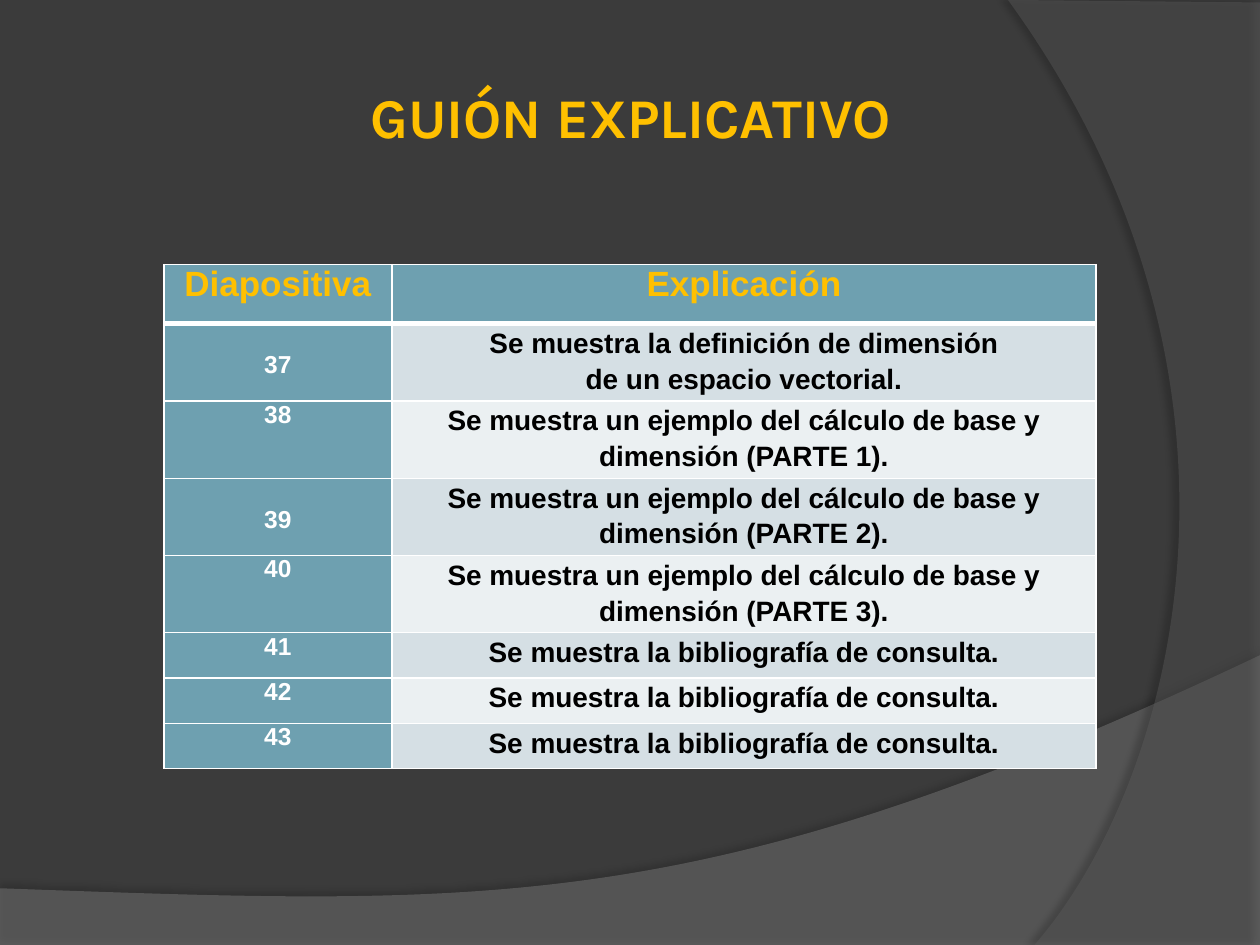
from lxml import etree
from pptx import Presentation
from pptx.dml.color import RGBColor
from pptx.enum.text import MSO_ANCHOR, PP_ALIGN
from pptx.oxml import parse_xml
from pptx.oxml.ns import nsdecls, qn
from pptx.util import Inches, Pt

CENTER, MIDDLE = PP_ALIGN.CENTER, MSO_ANCHOR.MIDDLE
WIDE, HIGH = 10, 7.5
INK = {"back": "3B3B3B", "low": "7F7F7F", "side": "5E5E5E", "gold": "FFC000",
       "teal": "6EA0B0", "odd": "D5DFE4", "even": "EBF0F2",
       "white": "FFFFFF", "black": "000000"}

TITLE = "GUIÓN EXPLICATIVO"
HEAD = ("Diapositiva", "Explicación")
PART = "Se muestra un ejemplo del cálculo de base y dimensión (PARTE {})."
BOOKS = "Se muestra la bibliografía de consulta."
NOTES = ["Se muestra la definición de dimensión\nde un espacio vectorial.",
         *(PART.format(n) for n in (1, 2, 3)), BOOKS, BOOKS, BOOKS]
FIRST = 37
LOWERED = (37, 39)      # numbers set one line lower in their cell
COLS = (1.81, 5.59)
HEAD_H, ROW_H = 0.47, 0.36
LINE_H = 0.22

# Each wave: corner points, the last of which starts the Bezier curve
WAVES = [
    dict(color="low", alpha=45, dark=35, dist=3.5, turn=270,
         corners=[(0, 7.05), (0, 7.51), (10, 7.51), (10, 5.2)],
         curve=[(5.59, 7.29), (3.91, 7.19), (0, 7.05)]),
    dict(color="side", alpha=40, dark=45, dist=4, turn=180,
         corners=[(10, 0.02), (10, 7.5), (8.21, 7.5)],
         curve=[(9.35, 6.19), (10.18, 3), (8, 0)]),
]


def rgb(name):
    return RGBColor.from_string(INK[name])


def paint(fill, name):
    fill.solid()
    fill.fore_color.rgb = rgb(name)


def bend(shape, first):
    """Turn three line segments, from index first on, into one curve."""
    track = shape._element.spPr.find(".//" + qn("a:path"))
    lines = track.findall(qn("a:lnTo"))[first:first + 3]
    curve = etree.Element(qn("a:cubicBezTo"))
    lines[0].addprevious(curve)
    for line in lines:
        curve.append(line[0])
        track.remove(line)
    # Control points may reach past the slide; the outline does not
    shape.width = min(shape.width, Inches(WIDE) - shape.left)
    track.set("w", str(shape.width))


def wave(slide, color, alpha, dark, dist, turn, corners, curve):
    pts = [(Inches(x), Inches(y)) for x, y in corners + curve]
    pen = slide.shapes.build_freeform(*pts[0])
    pen.add_line_segments(pts[1:], close=True)
    shape = pen.convert_to_shape()
    bend(shape, len(corners) - 1)
    paint(shape.fill, color)
    tint = shape.fill._xPr.find(qn("a:solidFill"))[0]
    etree.SubElement(tint, qn("a:alpha"), val=str(alpha * 1000))
    shape.line.fill.background()
    shape._element.spPr.append(parse_xml(
        f'<a:effectLst {nsdecls("a")}><a:outerShdw blurRad="{Pt(4)}" '
        f'dist="{Pt(dist)}" dir="{turn * 60000}" rotWithShape="0">'
        f'<a:srgbClr val="{INK["black"]}"><a:alpha val="{dark * 1000}"/>'
        '</a:srgbClr></a:outerShdw></a:effectLst>'))


def write(par, text, size, color, face="Arial"):
    par.text = text
    par.alignment = CENTER
    font = par.font
    font.name, font.size, font.bold = face, Pt(size), True
    font.color.rgb = rgb(color)
    # The end mark needs the same size, or it makes the last line taller
    etree.SubElement(par._p, qn("a:endParaRPr"), sz=str(size * 100))


def edge(cell, **widths):
    """White cell borders; widths in points by side letter."""
    props = cell._tc.get_or_add_tcPr()
    for side in "LRTB":
        props.append(parse_xml(
            f'<a:ln{side} {nsdecls("a")} w="{Pt(widths.get(side, 1))}">'
            f'<a:solidFill><a:srgbClr val="{INK["white"]}"/></a:solidFill>'
            f'</a:ln{side}>'))


def put(cell, text, size, color, fill, top=0, **widths):
    cell.margin_left = cell.margin_right = Inches(0.07)
    cell.margin_top, cell.margin_bottom = Inches(top), 0
    edge(cell, **widths)
    paint(cell.fill, fill)
    par = cell.text_frame.paragraphs[0]
    write(par, text, size, color)
    return par


def main():
    deck = Presentation()
    deck.slide_width, deck.slide_height = Inches(WIDE), Inches(HIGH)
    slide = deck.slides.add_slide(deck.slide_layouts[6])
    paint(slide.background.fill, "back")
    for item in WAVES:
        wave(slide, **item)

    box = slide.shapes.add_textbox(
        Inches(0.92), Inches(0.3), Inches(8.17), Inches(1.25))
    frame = box.text_frame
    frame.word_wrap, frame.vertical_anchor = True, MIDDLE
    write(frame.paragraphs[0], TITLE, 32, "gold", "Karla")

    width = sum(COLS)
    grid = slide.shapes.add_table(
        len(NOTES) + 1, len(COLS), Inches((WIDE - width) / 2), Inches(2.1),
        Inches(width), Inches(HEAD_H + ROW_H * len(NOTES))).table
    for col, size in zip(grid.columns, COLS):
        col.width = Inches(size)
    for i, row in enumerate(grid.rows):
        row.height = Inches(ROW_H if i else HEAD_H)

    for c, text in enumerate(HEAD):
        put(grid.cell(0, c), text, 20, "gold", "teal", B=3)
    for r, note in enumerate(NOTES, 1):
        num = FIRST + r - 1
        rule = {"T": 3} if r == 1 else {}
        put(grid.cell(r, 0), str(num), 14, "white", "teal",
            LINE_H if num in LOWERED else 0, **rule)
        par = put(grid.cell(r, 1), note, 16, "black",
                  "odd" if r % 2 else "even", **rule)
        par.line_spacing = 1.15

    deck.save("out.pptx")


if __name__ == "__main__":
    main()
